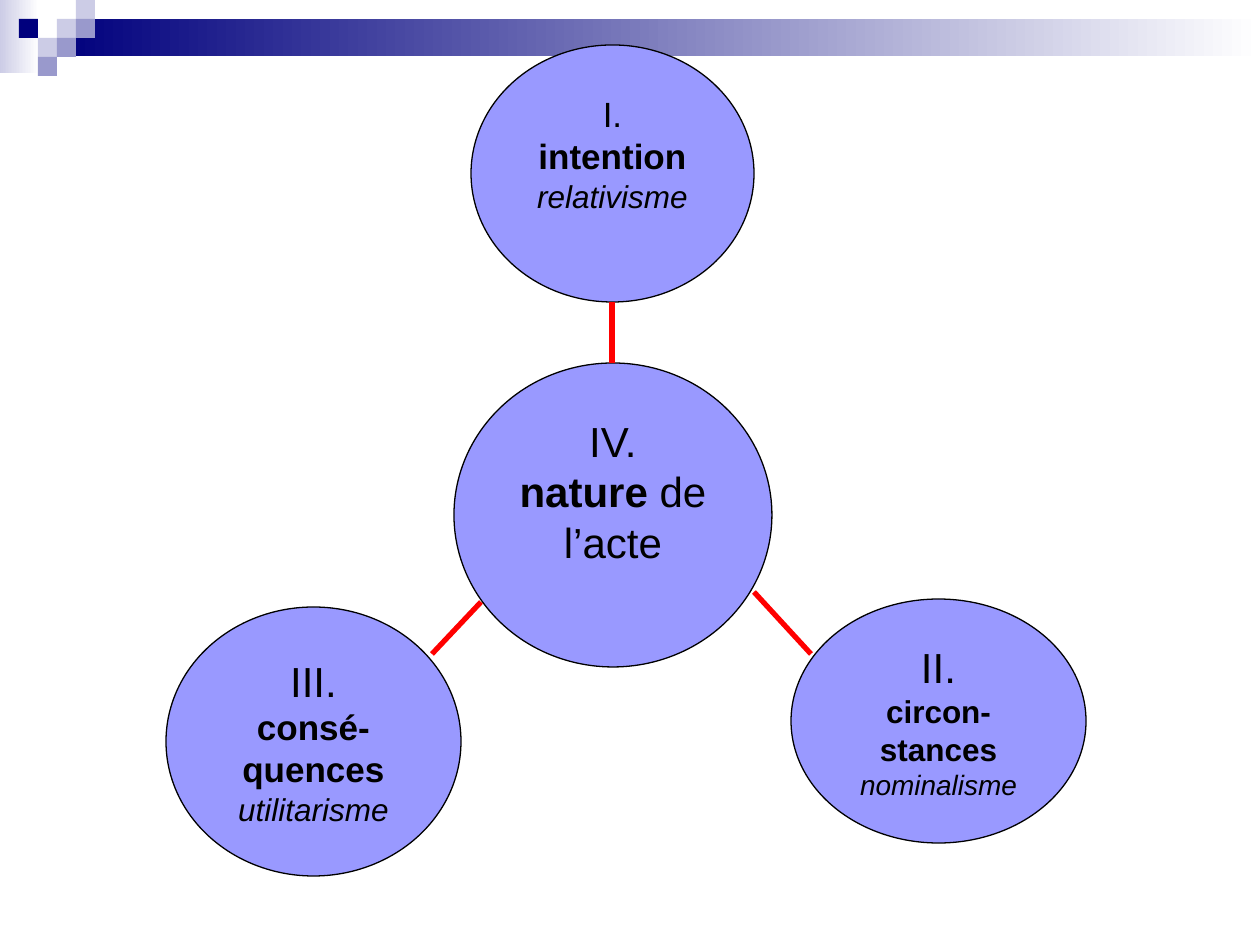
from dataclasses import dataclass

from pptx import Presentation
from pptx.dml.color import RGBColor
from pptx.enum.shapes import MSO_CONNECTOR, MSO_SHAPE
from pptx.enum.text import MSO_ANCHOR, PP_ALIGN
from pptx.oxml.ns import qn
from pptx.util import Emu, Pt
from lxml.etree import SubElement


@dataclass(frozen=True)
class Theme:
    font: str = "Arial"
    navy: str = "00007D"
    pale: str = "CCCCE6"
    lilac: str = "9999CC"
    circle: str = "9999FF"
    ink: str = "000000"
    link: str = "FF0000"
    white: str = "FFFFFF"
    large: int = 24
    medium: int = 20
    small: int = 18
    tiny: int = 16
    outline: float = 0.75
    link_width: int = 3


THEME = Theme()
GRID = 19  # side of a decorative square

# Colour, column and row of each decorative square
SQUARES = [
    (THEME.pale, 3, 1), (THEME.pale, 4, 0), (THEME.lilac, 4, 1),
    (THEME.pale, 2, 2), (THEME.navy, 1, 1), (THEME.lilac, 3, 2),
    (THEME.lilac, 2, 3),
]

# Box, extra space below the text, then paragraphs: size, style, runs (text, bold)
CIRCLES = [
    ((454, 363, 318, 304), 48, [
        (THEME.large, False, [("IV.", False)]),
        (THEME.large, False, [("nature ", True), ("de l’acte", False)]),
    ]),
    ((471, 45, 283, 257), 40, [
        (THEME.medium, False, [("I.", False)]),
        (THEME.medium, False, [("intention", True)]),
        (THEME.small, True, [("relativisme", False)]),
    ]),
    ((166, 607, 295, 269), 0, [
        (THEME.large, False, [("III.", False)]),
        (THEME.medium, False, [("consé-quences", True)]),
        (THEME.small, True, [("utilitarisme", False)]),
    ]),
    ((791, 599, 295, 244), 0, [
        (THEME.large, False, [("II.", False)]),
        (THEME.small, False, [("circon-", True)]),
        (THEME.small, False, [("stances", True)]),
        (THEME.tiny, True, [("nominalisme", False)]),
    ]),
]

LINKS = [(612, 363, 612, 302), (432, 654, 481, 602), (811, 654, 754, 592)]


def px(value):
    return Emu(round(value * 914400 / 126))


def color(value):
    return RGBColor.from_string(value)


def add_block(slide, kind, box, fill):
    shape = slide.shapes.add_shape(kind, *map(px, box))
    shape.shadow.inherit = False
    shape.line.fill.background()
    shape.fill.solid()
    shape.fill.fore_color.rgb = color(fill)
    return shape


def add_fade(slide, box, start):
    shape = add_block(slide, MSO_SHAPE.RECTANGLE, box, start)
    shape.fill.gradient()
    shape.fill.gradient_angle = 0
    for stop, value in zip(shape.fill.gradient_stops, (start, THEME.white)):
        stop.color.rgb = color(value)


def add_circle(slide, box, space_below, paragraphs):
    shape = add_block(slide, MSO_SHAPE.OVAL, box, THEME.circle)
    shape.line.color.rgb = color(THEME.ink)
    shape.line.width = Pt(THEME.outline)
    frame = shape.text_frame
    frame.word_wrap = True
    frame.vertical_anchor = MSO_ANCHOR.MIDDLE
    frame.margin_bottom = px(6 + space_below)
    for index, (size, italic, runs) in enumerate(paragraphs):
        paragraph = frame.add_paragraph() if index else frame.paragraphs[0]
        paragraph.alignment = PP_ALIGN.CENTER
        paragraph.font.name = THEME.font
        paragraph.font.size = Pt(size)
        paragraph.font.italic = italic
        paragraph.font.color.rgb = color(THEME.ink)
        for text, bold in runs:
            run = paragraph.add_run()
            run.text = text
            run.font.bold = bold


def add_link(slide, ends):
    line = slide.shapes.add_connector(MSO_CONNECTOR.STRAIGHT, *map(px, ends))
    line.line.color.rgb = color(THEME.link)
    line.line.width = Pt(THEME.link_width)
    SubElement(line._element.spPr, qn("a:effectLst"))


def main():
    presentation = Presentation()
    presentation.slide_width, presentation.slide_height = px(1260), px(945)
    slide = presentation.slides.add_slide(presentation.slide_layouts[6])

    # Header band and squares
    add_fade(slide, (0, 0, 39, 73), THEME.pale)
    add_fade(slide, (57, 19, 1203, 37), THEME.navy)
    for fill, column, row in SQUARES:
        box = (column * GRID, row * GRID, GRID, GRID)
        add_block(slide, MSO_SHAPE.RECTANGLE, box, fill)

    # Diagram
    for circle in CIRCLES:
        add_circle(slide, *circle)
    for ends in LINKS:
        add_link(slide, ends)

    presentation.save("out.pptx")


if __name__ == "__main__":
    main()
